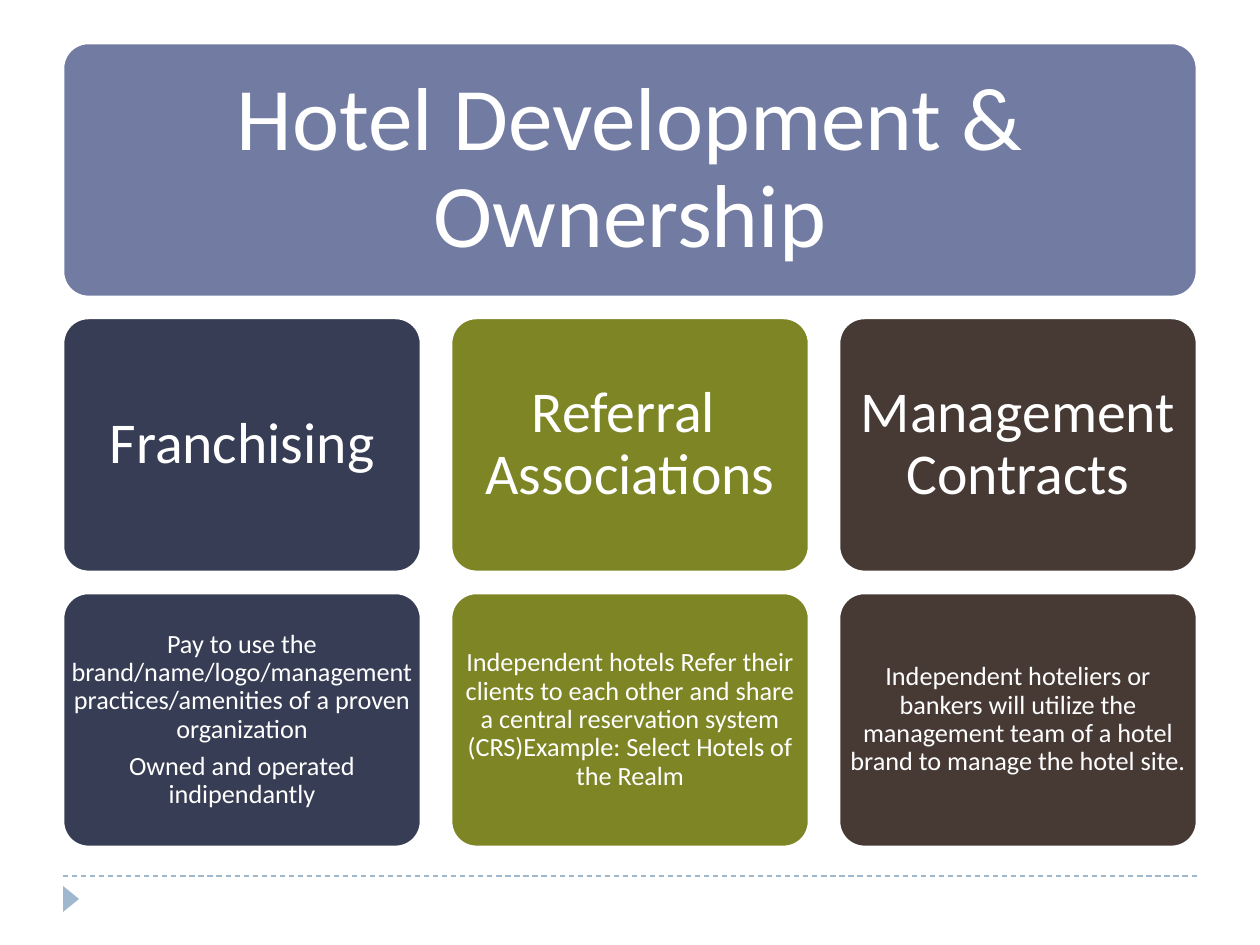
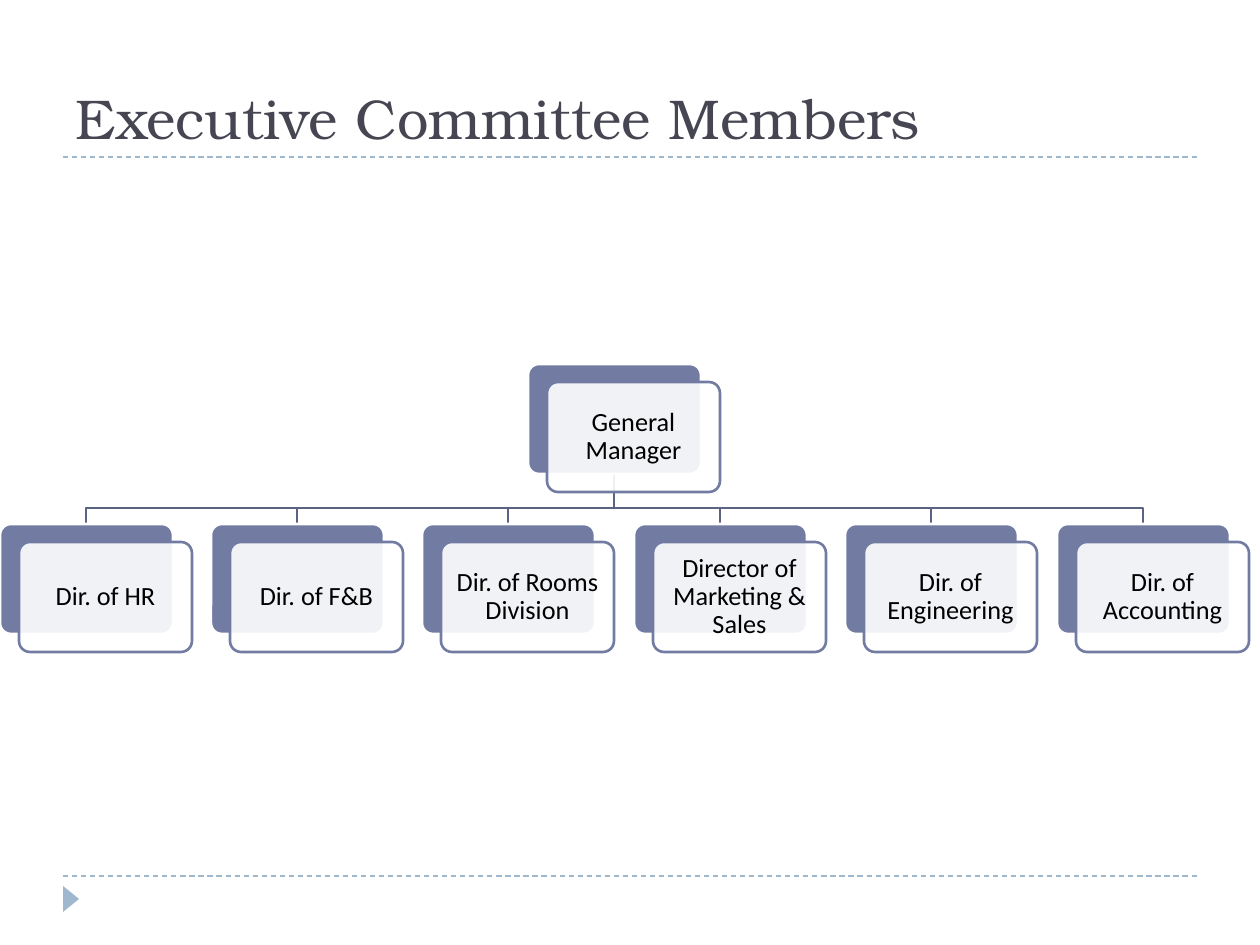
from lxml import etree
from pptx import Presentation
from pptx import util as u
from pptx.dml.color import RGBColor
from pptx.enum import dml, shapes, text
from pptx.oxml.ns import qn

PX = 914400 / 126  # EMU in one px
WIDE, HIGH = 1260, 945
LEFT, SPAN = 63, 1134  # content margin and width

WHITE = RGBColor(0xFF, 0xFF, 0xFF)
BLACK = RGBColor(0x00, 0x00, 0x00)
BLUE = RGBColor(0x72, 0x7C, 0xA3)
NAVY = RGBColor(0x37, 0x3D, 0x54)
OLIVE = RGBColor(0x7D, 0x85, 0x25)
BROWN = RGBColor(0x47, 0x3A, 0x35)
LINK = RGBColor(0x5B, 0x63, 0x83)
PALE = RGBColor(0x9F, 0xB8, 0xCD)
INK = RGBColor(0x46, 0x46, 0x53)

BODY, HEAD = "Calibri", "TeX Gyre Bonum"
ROUND = shapes.MSO_SHAPE.ROUNDED_RECTANGLE


def emu(*px):
    return [u.Emu(round(n * PX)) for n in px]


def write(shape, words, size, color, font=BODY, align=text.PP_ALIGN.CENTER,
          anchor=text.MSO_ANCHOR.MIDDLE, pad=(0, 0), lead=0.9):
    """Fill a shape with text, one paragraph for each line of words."""
    frame = shape.text_frame
    frame.word_wrap = True
    frame.vertical_anchor = anchor
    frame.margin_left, frame.margin_top = emu(*pad)
    frame.margin_right, frame.margin_bottom = emu(*pad)
    for i, line in enumerate(words.split("\n")):
        para = frame.add_paragraph() if i else frame.paragraphs[0]
        para.text = line
        para.alignment = align
        para.line_spacing = lead
        if i:
            para.space_before = u.Pt(round(size * 0.35))
        para.font.size = u.Pt(size)
        para.font.name = font
        para.font.color.rgb = color


def draw(slide, kind, box, fill, line=None):
    shape = slide.shapes.add_shape(kind, *emu(*box))
    shape.shadow.inherit = False
    shape.fill.solid()
    shape.fill.fore_color.rgb = fill
    if line is None:
        shape.line.fill.background()
    else:
        shape.line.color.rgb = line
        shape.line.width = u.Pt(1.5)
    if kind == ROUND:
        shape.adjustments[0] = 0.1
    return shape


def rule(slide, y):
    """Dashed line across the content width."""
    line = slide.shapes.add_connector(
        shapes.MSO_CONNECTOR.STRAIGHT, *emu(LEFT, y, LEFT + SPAN, y))
    line.line.color.rgb = PALE
    line.line.width = u.Pt(0.75)
    line.line.dash_style = dml.MSO_LINE.DASH
    etree.SubElement(line._element.spPr, qn("a:effectLst"))


def start(deck):
    """Blank slide with the shared footer."""
    slide = deck.slides.add_slide(deck.slide_layouts[6])
    rule(slide, 876)
    mark = draw(slide, shapes.MSO_SHAPE.ISOSCELES_TRIANGLE,
                (58, 891, 26, 16), PALE)
    mark.rotation = 90
    return slide


def title(slide, words):
    rule(slide, 157)
    box = slide.shapes.add_textbox(*emu(LEFT, 21, SPAN, 136))
    write(box, words, 32, INK, font=HEAD, align=text.PP_ALIGN.LEFT,
          anchor=text.MSO_ANCHOR.BOTTOM, pad=(13, 6), lead=1)


def cards(slide, box, head, cols):
    """A wide header above columns of a name card and a detail card."""
    left, top, wide, high = box
    gap_x, gap_y = 30, 21
    card_w = (wide - gap_x * (len(cols) - 1)) // len(cols)
    card_h = (high - gap_y * 2) // 3

    def card(x, row, width, fill, words, size, pad):
        y = top + row * (card_h + gap_y)
        shape = draw(slide, ROUND, (x, y, width, card_h), fill, WHITE)
        write(shape, words, size, WHITE, pad=(pad, pad))

    card(left, 0, wide, BLUE, head, 51, 19)
    for i, (fill, name, detail) in enumerate(cols):
        x = left + i * (card_w + gap_x)
        card(x, 1, card_w, fill, name, 33, 11)
        card(x, 2, card_w, fill, detail, 15, 0)


def chart(slide, box, boss, team):
    """Organisation chart: one boss above an even row of reports."""
    left, top, wide, high = box
    node_w, node_h, off_x, off_y = 173, 110, 19, 18
    reach = wide - node_w - off_x
    low = top + high - node_h - off_y
    mid = left + reach // 2
    spots = [left + reach * i // (len(team) - 1) for i in range(len(team))]

    def link(x):
        half, bend = node_w // 2, low - 16
        pen = slide.shapes.build_freeform(mid + half, top + node_h, scale=PX)
        pen.add_line_segments([(mid + half, bend), (x + half, bend),
                               (x + half, low)], close=False)
        shape = pen.convert_to_shape()
        shape.shadow.inherit = False
        shape.fill.background()
        shape.line.color.rgb = LINK
        shape.line.width = u.Pt(1.5)

    def node(x, y, words):
        draw(slide, ROUND, (x, y, node_w, node_h), BLUE, WHITE)
        front = draw(slide, ROUND, (x + off_x, y + off_y, node_w, node_h),
                     WHITE, BLUE)
        tint = front._element.spPr.find(qn("a:solidFill"))[0]
        etree.SubElement(tint, qn("a:alpha"), val="90000")
        write(front, words, 15, BLACK, pad=(4, 4))

    for x in reversed(spots):
        link(x)
    node(mid, top, boss)
    for x, role in zip(spots, team):
        node(x, low, role)


def main():
    deck = Presentation()
    deck.slide_width, deck.slide_height = emu(WIDE, HIGH)

    # Ways to develop and own hotels
    cards(start(deck), (LEFT, 43, SPAN, 804), "Hotel Development & Ownership", [
        (NAVY, "Franchising",
         "Pay to use the brand/name/logo/management practices/amenities "
         "of a proven organization\nOwned and operated indipendantly"),
        (OLIVE, "Referral \vAssociations",
         "Independent hotels Refer their clients to each other and share "
         "a central reservation system (CRS)Example: Select Hotels "
         "of the Realm"),
        (BROWN, "Management Contracts",
         "Independent hoteliers or bankers will utilize the management "
         "team of a hotel brand to manage the hotel site."),
    ])

    # Executive committee
    slide = start(deck)
    title(slide, "Executive Committee Members")
    chart(slide, (0, 364, 1249, 288), "General Manager", [
        "Dir. of HR", "Dir. of F&B", "Dir. of Rooms Division",
        "Director of Marketing & Sales", "Dir. of Engineering",
        "Dir. of Accounting"])

    deck.save("out.pptx")


if __name__ == "__main__":
    main()
